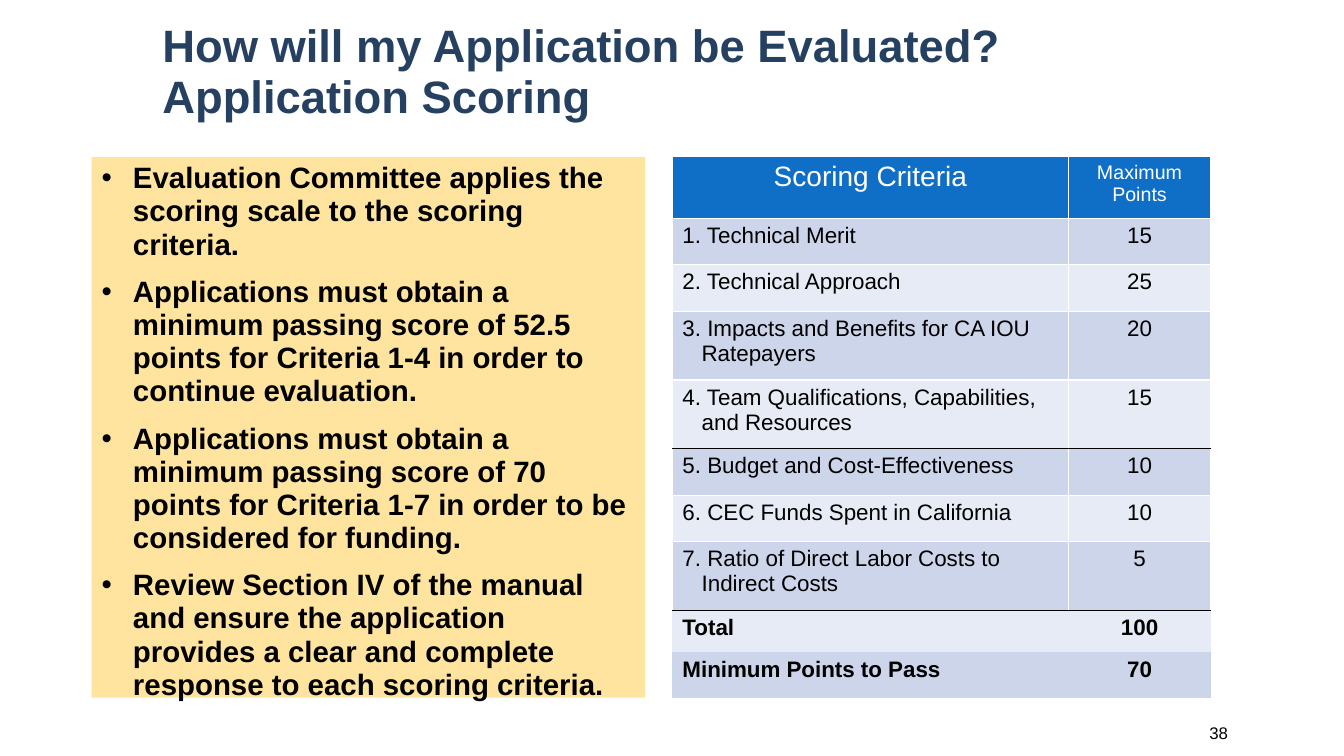
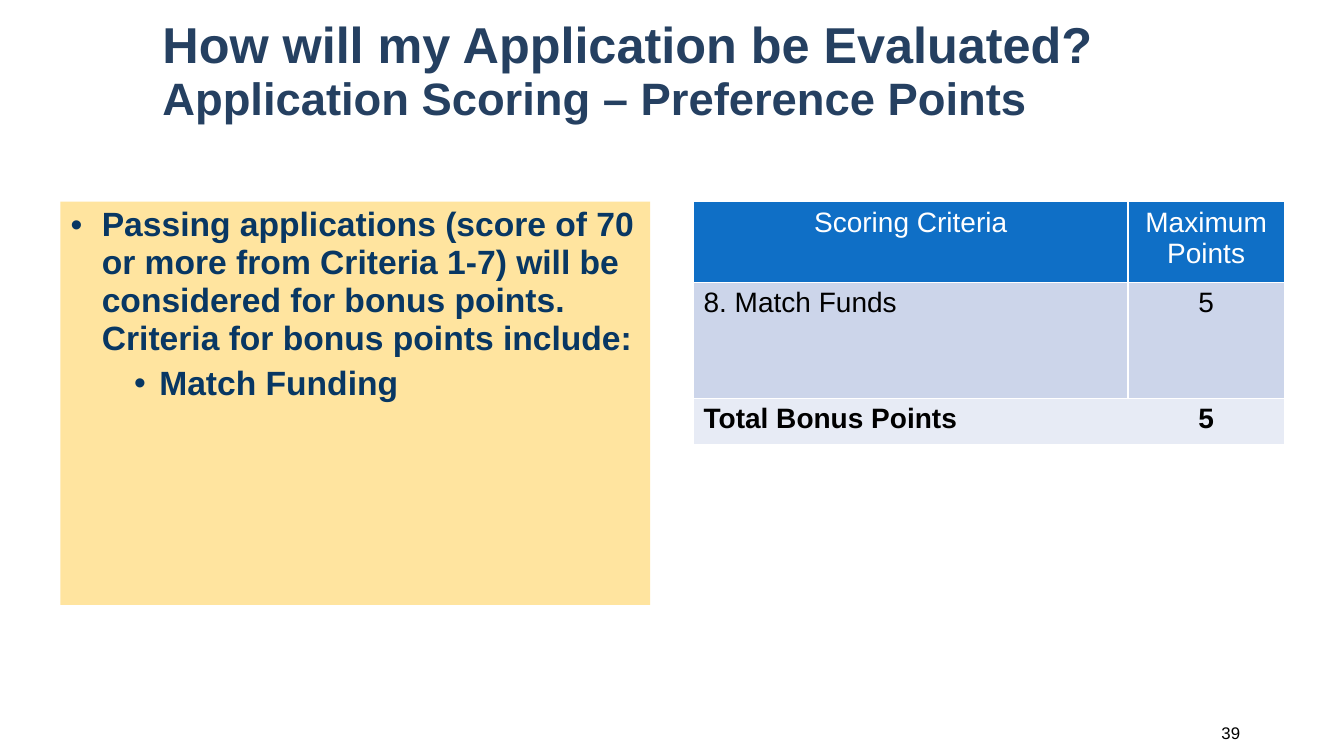
from lxml.etree import SubElement
from pptx import Presentation
from pptx.dml.color import RGBColor
from pptx.enum.text import MSO_ANCHOR, MSO_AUTO_SIZE, PP_ALIGN
from pptx.oxml.ns import qn
from pptx.util import Inches, Pt

FONT = "Arial"
TITLE = RGBColor(0x25, 0x40, 0x61)
NAVY = RGBColor(0x08, 0x37, 0x63)
BLACK = RGBColor(0, 0, 0)
WHITE = RGBColor(0xFF, 0xFF, 0xFF)
PANEL = RGBColor(0xFF, 0xE4, 0x9F)
HEADER = RGBColor(0x0F, 0x6F, 0xC6)
BANDS = (RGBColor(0xCC, 0xD5, 0xEA), RGBColor(0xE7, 0xEB, 0xF5))
LEADING = 0.94


def write(p, text, size=16, color=BLACK, bold=False, align=PP_ALIGN.LEFT,
          leading=None, before=0, hang=None, bullet=None):
    if hang:
        margin, indent = hang
        pPr = p._p.get_or_add_pPr()
        pPr.set("marL", str(Inches(margin)))
        pPr.set("indent", str(Inches(indent)))
        if bullet:
            SubElement(pPr, qn("a:buFont"), typeface=FONT)
            SubElement(pPr, qn("a:buChar"), char=bullet)
    p.alignment = align
    p.space_before = Pt(before)
    if leading:
        p.line_spacing = leading
    r = p.add_run()
    r.text = text
    r.font.name = FONT
    r.font.size = Pt(size)
    r.font.bold = bold
    r.font.color.rgb = color


def draw_border(cell, side, color):
    tcPr = cell._tc.get_or_add_tcPr()
    ln = SubElement(tcPr, qn(f"a:{side}"), w=str(Pt(1)))
    if color is None:
        SubElement(ln, qn("a:noFill"))
    else:
        fill = SubElement(ln, qn("a:solidFill"))
        SubElement(fill, qn("a:srgbClr"), val=str(color))


class Deck:
    def __init__(self):
        self.prs = Presentation()
        self.prs.slide_width = Inches(13.33)
        self.prs.slide_height = Inches(7.5)
        self.s = None

    def x(self, percent):
        return round(self.prs.slide_width * percent / 100)

    def y(self, percent):
        return round(self.prs.slide_height * percent / 100)

    def box(self, left, top, width, height):
        return self.x(left), self.y(top), self.x(width), self.y(height)

    def place(self, sp, *area):
        sp.left, sp.top, sp.width, sp.height = self.box(*area)
        tf = sp.text_frame
        tf.word_wrap = True
        tf.auto_size = MSO_AUTO_SIZE.NONE
        tf.vertical_anchor = MSO_ANCHOR.TOP
        return tf

    def slide(self):
        self.s = self.prs.slides.add_slide(self.prs.slide_layouts[1])

    def title(self, top, *lines):
        tf = self.place(self.s.shapes.title, 11.33, top, 81.7, 15.2)
        p = tf.paragraphs[0]
        for i, (text, size) in enumerate(lines):
            if i:
                p.add_line_break()
            write(p, text, size=size, color=TITLE, bold=True, leading=LEADING)

    def bullets(self, area, items, size, color):
        sp = self.s.placeholders[1]
        sp.fill.solid()
        sp.fill.fore_color.rgb = PANEL
        tf = self.place(sp, *area)
        for i, (level, text) in enumerate(items):
            p = tf.add_paragraph() if i else tf.paragraphs[0]
            p.level = level
            write(p, text, size=size, color=color, bold=True, leading=LEADING,
                  before=(5 if level else 10) if i else 0,
                  hang=(0.88, -0.25) if level else (0.31, -0.31), bullet="•")

    def table(self, left, top, columns, rows, heading_sizes, size, totals, ruled=()):
        rows = [(rows[0][0], "Scoring Criteria", "Maximum Points"), *rows[1:]]
        area = self.box(left, top, sum(columns), sum(row[0] for row in rows))
        table = self.s.shapes.add_table(len(rows), len(columns), *area).table
        for column, width in zip(table.columns, columns):
            column.width = self.x(width)
        for i, (height, *texts) in enumerate(rows):
            table.rows[i].height = self.y(height)
            total = i >= len(rows) - totals
            for j, text in enumerate(texts):
                cell = table.cell(i, j)
                side = None if total else WHITE
                above = BLACK if i - 1 in ruled else side
                if total and i == len(rows) - totals and not ruled:
                    above = WHITE
                below = BLACK if i in ruled else side
                for name, color in (("lnL", side), ("lnR", side),
                                    ("lnT", above), ("lnB", below)):
                    draw_border(cell, name, color)
                cell.fill.solid()
                cell.fill.fore_color.rgb = BANDS[(i + 1) % 2] if i else HEADER
                centred = j or not i
                write(cell.text_frame.paragraphs[0], text,
                      size=size if i else heading_sizes[j],
                      color=BLACK if i else WHITE, bold=total,
                      align=PP_ALIGN.CENTER if centred else PP_ALIGN.LEFT,
                      hang=None if centred or total else (0.19, -0.19))

    def number(self, left, text):
        area = (left, 94.27, 14.48, 5.33)
        tf = self.place(self.s.shapes.add_textbox(*self.box(*area)), *area)
        tf.vertical_anchor = MSO_ANCHOR.MIDDLE
        write(tf.paragraphs[0], text, size=12, align=PP_ALIGN.RIGHT)


def main():
    deck = Deck()
    question = "How will my Application be Evaluated?"

    deck.slide()
    deck.title(2.2, (question, 32.4), ("Application Scoring", 32.4))
    deck.bullets((6.82, 20.8, 41.18, 71.47), [
        (0, "Evaluation Committee applies the scoring scale to the scoring criteria."),
        (0, "Applications must obtain a minimum passing score of 52.5 points for "
            "Criteria 1-4 in order to continue evaluation."),
        (0, "Applications must obtain a minimum passing score of 70 points for "
            "Criteria 1-7 in order to be considered for funding."),
        (0, "Review Section IV of the manual and ensure the application provides a "
            "clear and complete response to each scoring criteria."),
    ], 21, BLACK)
    single, double = 6.15, 9.1
    deck.table(50.03, 20.67, (29.47, 10.58), [
        (8.2,),
        (single, "1. Technical Merit", "15"),
        (single, "2. Technical Approach", "25"),
        (double, "3. Impacts and Benefits for CA IOU Ratepayers", "20"),
        (double, "4. Team Qualifications, Capabilities, and Resources", "15"),
        (single, "5. Budget and Cost-Effectiveness", "10"),
        (single, "6. CEC Funds Spent in California", "10"),
        (double, "7. Ratio of Direct Labor Costs to Indirect Costs", "5"),
        (5.5, "Total", "100"),
        (6.1, "Minimum Points to Pass", "70"),
    ], (20, 14), 16, totals=2, ruled=(4, 7))
    deck.number(77.63, "38")

    deck.slide()
    deck.title(1.7, (question, 36), ("Application Scoring – Preference Points", 32.4))
    deck.bullets((4.5, 26.67, 43.88, 53.33), [
        (0, "Passing applications (score of 70 or more from Criteria 1-7) will be "
            "considered for bonus points. Criteria for bonus points include:"),
        (1, "Match Funding"),
    ], 24, NAVY)
    deck.table(51.6, 26.67, (32.33, 11.63), [
        (10.67,),
        (15.33, "8. Match Funds", "5"),
        (6, "Total Bonus Points", "5"),
    ], (20, 20), 20, totals=1)
    deck.number(78.53, "39")

    deck.prs.save("out.pptx")


if __name__ == "__main__":
    main()
